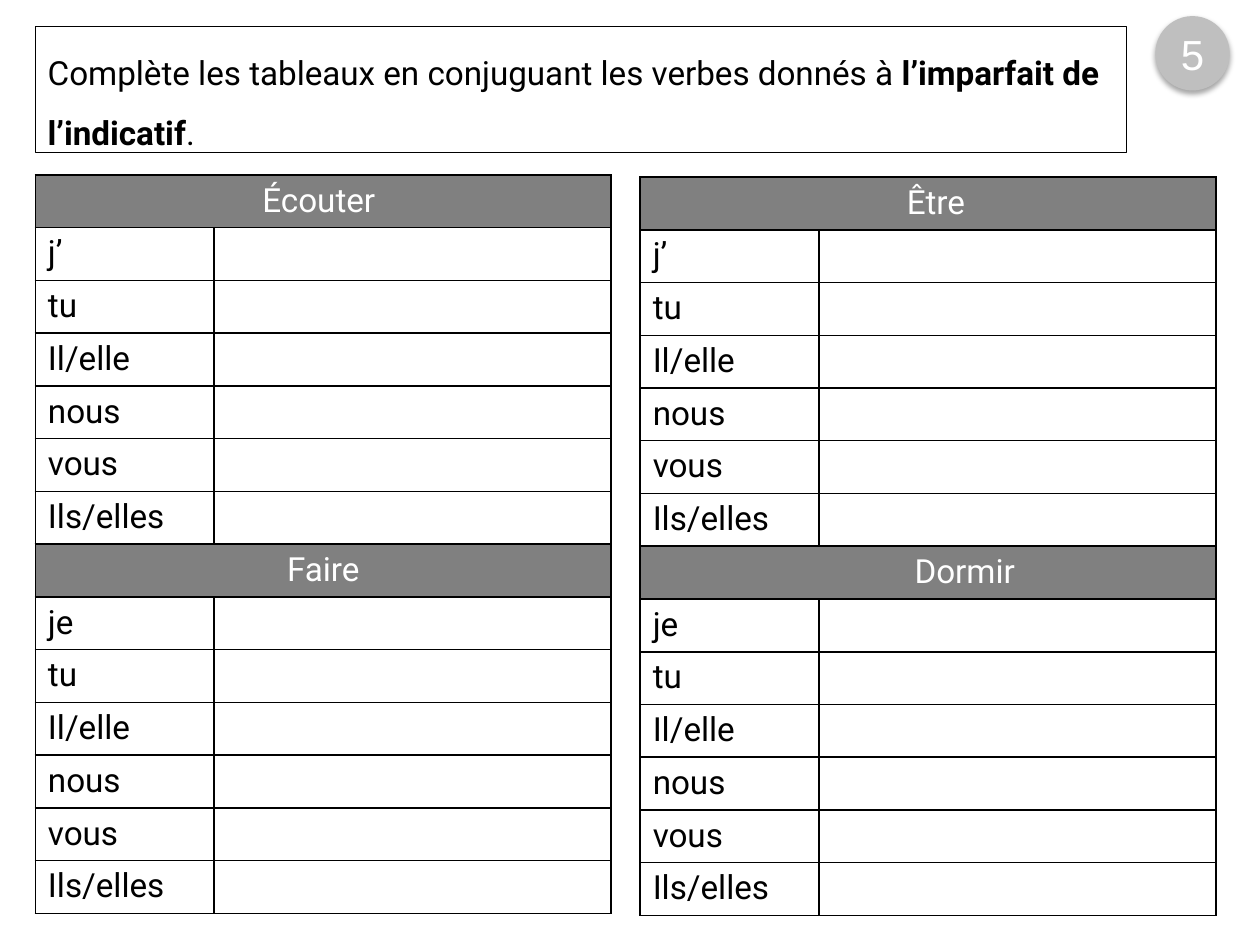
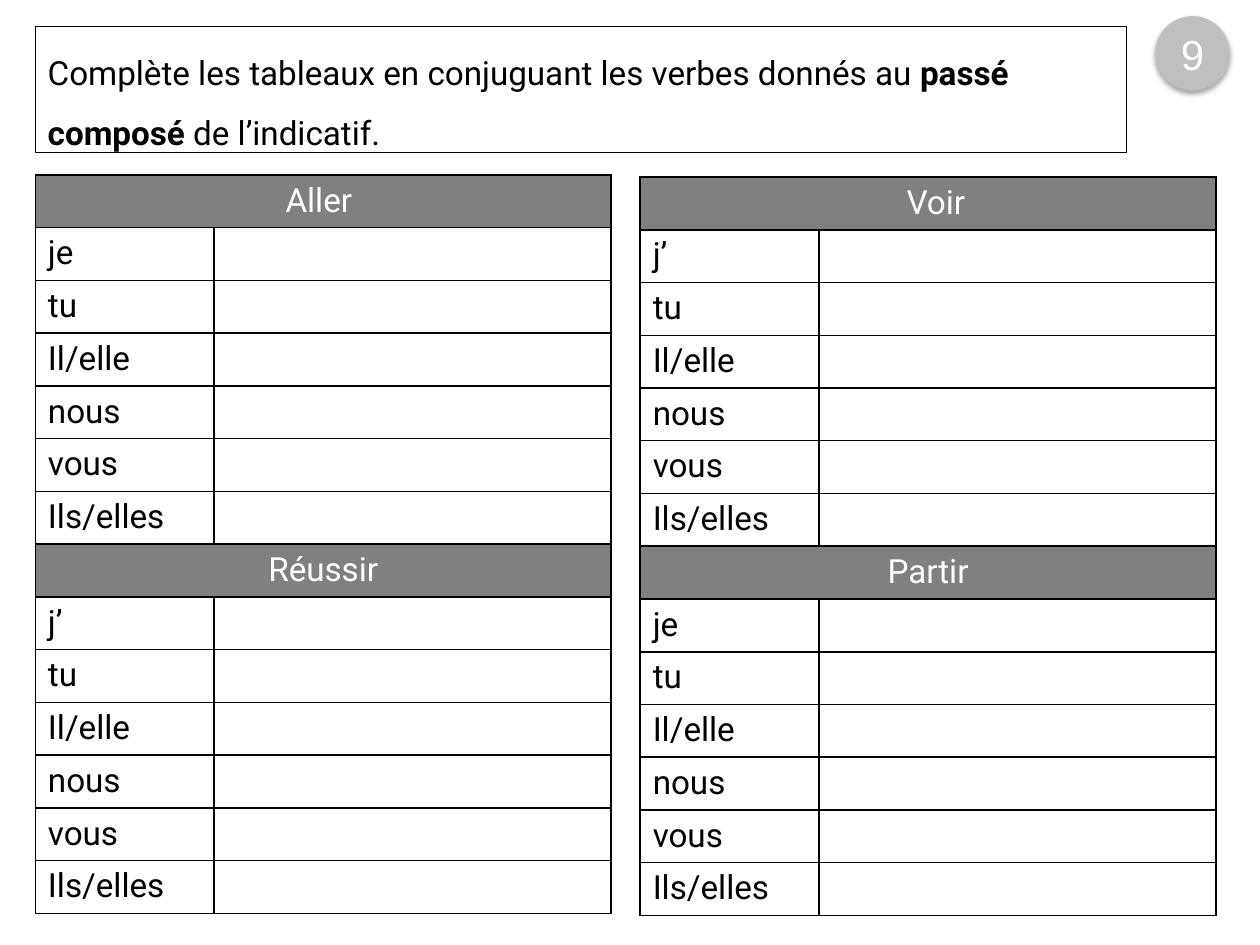
from dataclasses import dataclass

from lxml import etree
from pptx import Presentation
from pptx.dml.color import RGBColor
from pptx.enum.shapes import MSO_SHAPE
from pptx.enum.text import MSO_ANCHOR, MSO_AUTO_SIZE, PP_ALIGN
from pptx.oxml.ns import qn
from pptx.util import Pt

OVAL = MSO_SHAPE.OVAL
MIDDLE = MSO_ANCHOR.MIDDLE
GROW = MSO_AUTO_SIZE.SHAPE_TO_FIT_TEXT
LEFT, CENTER = PP_ALIGN.LEFT, PP_ALIGN.CENTER


@dataclass(frozen=True)
class Theme:
    ink: str = "000000"
    paper: str = "FFFFFF"
    heading: str = "808080"
    badge: str = "BFBFBF"
    body_font: str = "Roboto"
    badge_font: str = "Arial"
    body_size: float = 19
    badge_size: float = 24
    frame_width: float = 0.25
    border_width: float = 1


COLUMN_WIDTHS = (102.2, 226.8)
ROW_HEIGHT = 30.14
CELL_INSET = 7.2
TABLE_COLUMNS = ((20.2, 100), (365.8, 101.2))  # left and top of each stack
PRONOUNS = ("tu", "Il/elle", "nous", "vous", "Ils/elles")

# Each verb: heading, first pronoun, extra inset (positive left, negative right).
WORKSHEETS = (
    {
        "number": "5",
        "instruction": (
            ("Complète les tableaux en conjuguant les verbes donnés à ", False),
            ("l’imparfait de l’indicatif", True),
            (".", False),
        ),
        "verbs": (
            (("Écouter", "j’", -5), ("Faire", "je", 0)),
            (("Être", "j’", 9), ("Dormir", "je", 42)),
        ),
    },
    {
        "number": "9",
        "instruction": (
            ("Complète les tableaux en conjuguant les verbes donnés au ", False),
            ("passé composé ", True),
            ("de l’indicatif.", False),
        ),
        "verbs": (
            (("Aller", "je", -5), ("Réussir", "j’", 0)),
            (("Voir", "j’", 9), ("Partir", "je", 0)),
        ),
    },
)


def add_span(para, text, *, font, size, color, bold=False, align=LEFT):
    para.alignment = align
    span = para.add_run()
    span.text = text
    span.font.name = font
    span.font.size = Pt(size)
    span.font.bold = bold
    span.font.color.rgb = RGBColor.from_string(color)


def add_color(parent, color):
    return etree.SubElement(parent, qn("a:srgbClr"), val=color)


def add_shadow(shape, color, *, blur, distance, opacity):
    """Cast a soft shadow straight down."""
    shape.shadow.inherit = False
    effects = shape._element.spPr.find(qn("a:effectLst"))
    shadow = etree.SubElement(
        effects, qn("a:outerShdw"), blurRad=str(Pt(blur)), dist=str(Pt(distance)),
        dir=str(90 * 60000), rotWithShape="0")
    etree.SubElement(add_color(shadow, color), qn("a:alpha"), val=str(opacity * 1000))


def add_borders(cell, color, width):
    properties = cell._tc.get_or_add_tcPr()
    for side in ("lnL", "lnR", "lnT", "lnB"):
        line = etree.SubElement(properties, qn(f"a:{side}"), w=str(Pt(width)))
        add_color(etree.SubElement(line, qn("a:solidFill")), color)


class WorksheetBuilder:
    def __init__(self, deck, theme):
        self.deck = deck
        self.theme = theme
        self.page = None

    def start_page(self):
        self.page = self.deck.slides.add_slide(self.deck.slide_layouts[6])

    def text(self, para, text, **changes):
        style = {"font": self.theme.body_font, "size": self.theme.body_size,
                 "color": self.theme.ink}
        add_span(para, text, **(style | changes))

    def instruction(self, spans):
        box = self.page.shapes.add_textbox(Pt(20.2), Pt(15.1), Pt(623.5), Pt(72))
        box.line.color.rgb = RGBColor.from_string(self.theme.ink)
        box.line.width = Pt(self.theme.frame_width)
        frame = box.text_frame
        frame.word_wrap = True
        frame.auto_size = GROW
        para = frame.paragraphs[0]
        para.line_spacing = 1.5
        for text, bold in spans:
            self.text(para, text, bold=bold)

    def badge(self, number):
        badge = self.page.shapes.add_shape(OVAL, Pt(660.2), Pt(9.2), Pt(42.5), Pt(42.5))
        badge.fill.solid()
        badge.fill.fore_color.rgb = RGBColor.from_string(self.theme.badge)
        badge.line.fill.background()
        add_shadow(badge, self.theme.ink, blur=3.1, distance=1.8, opacity=35)
        frame = badge.text_frame
        frame.margin_left = frame.margin_right = 0
        frame.vertical_anchor = MIDDLE
        self.text(frame.paragraphs[0], number, font=self.theme.badge_font,
                  size=self.theme.badge_size, color=self.theme.paper, align=CENTER)

    def verb_table(self, left, top, verb, first_pronoun, nudge):
        labels = (verb, first_pronoun, *PRONOUNS)
        table = self.page.shapes.add_table(
            len(labels), len(COLUMN_WIDTHS), Pt(left), Pt(top),
            Pt(sum(COLUMN_WIDTHS)), Pt(ROW_HEIGHT * len(labels))).table
        table.first_row = table.horz_banding = False
        for column, width in zip(table.columns, COLUMN_WIDTHS):
            column.width = Pt(width)
        for index, (row, label) in enumerate(zip(table.rows, labels)):
            row.height = Pt(ROW_HEIGHT)
            is_heading = index == 0
            fill = self.theme.heading if is_heading else self.theme.paper
            for cell in row.cells:
                add_borders(cell, self.theme.ink, self.theme.border_width)
                cell.fill.solid()
                cell.fill.fore_color.rgb = RGBColor.from_string(fill)
            self.text(table.cell(index, 0).text_frame.paragraphs[0], label,
                      color=self.theme.paper if is_heading else self.theme.ink,
                      align=CENTER if is_heading else LEFT)
        heading = table.cell(0, 0)
        heading.merge(table.cell(0, 1))
        heading.margin_left = Pt(CELL_INSET + max(nudge, 0))
        heading.margin_right = Pt(CELL_INSET + max(-nudge, 0))

    def worksheet(self, number, instruction, verbs):
        self.start_page()
        self.instruction(instruction)
        self.badge(number)
        table_height = ROW_HEIGHT * (len(PRONOUNS) + 2)
        for (left, top), stack in zip(TABLE_COLUMNS, verbs):
            for position, verb in enumerate(stack):
                self.verb_table(left, top + position * table_height, *verb)


def main():
    deck = Presentation()
    deck.slide_width, deck.slide_height = Pt(720), Pt(540)
    builder = WorksheetBuilder(deck, Theme())
    for worksheet in WORKSHEETS:
        builder.worksheet(**worksheet)
    deck.save("out.pptx")


if __name__ == "__main__":
    main()
